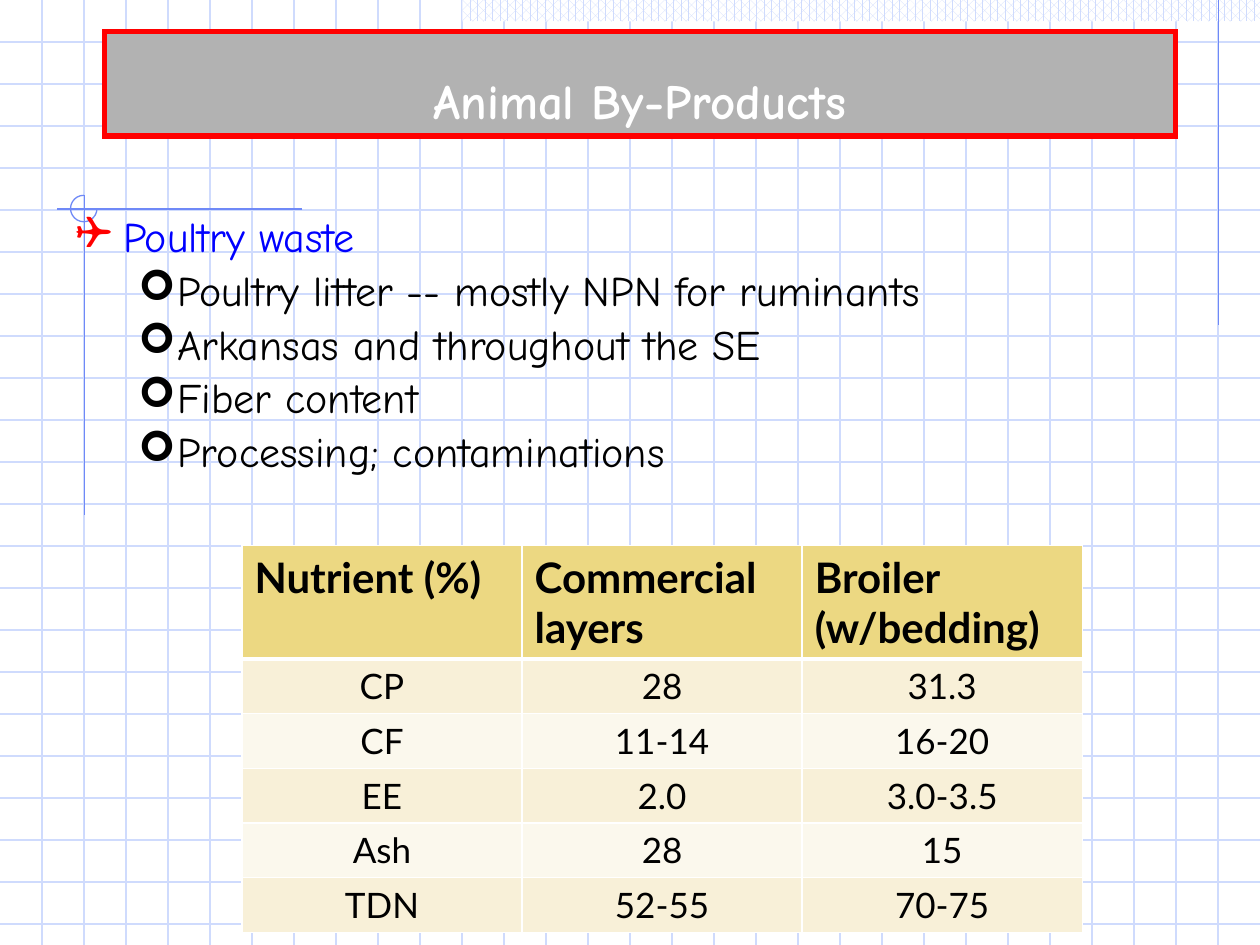
from dataclasses import dataclass

from lxml.etree import SubElement
from pptx import Presentation
from pptx.dml.color import RGBColor as Rgb
from pptx.enum.dml import MSO_PATTERN as Pattern
from pptx.enum.shapes import MSO_CONNECTOR as Connector, MSO_SHAPE as Shape
from pptx.enum.text import MSO_ANCHOR as Anchor, MSO_AUTO_SIZE as AutoSize, PP_ALIGN as Align
from pptx.oxml.ns import qn
from pptx.util import Inches, Pt


@dataclass(frozen=True)
class Theme:
    heading_font: str = "Comic Neue"
    table_font: str = "Lato"
    bullet_font: str = "Wingdings"
    title_size: int = 28
    body_size: int = 24
    header_size: int = 24
    cell_size: int = 20
    white: str = "FFFFFF"
    black: str = "000000"
    red: str = "FF0000"
    blue: str = "0000FF"
    gray: str = "B2B2B2"
    rule: str = "6F89F7"
    pale: str = "CFDBFD"
    header_fill: str = "ECD882"
    band_fills: tuple = ("F8F0D8", "FBF8ED")


WIDTH, HEIGHT = 10, 7.5
BULLETS = [
    (0, "Poultry waste"),
    (1, "Poultry litter -- mostly NPN for ruminants"),
    (1, "Arkansas and throughout the SE"),
    (1, "Fiber content"),
    (1, "Processing; contaminations"),
]
NUTRIENTS = [
    ("Nutrient (%)", "Commercial layers", "Broiler (w/bedding)"),
    ("CP", "28", "31.3"),
    ("CF", "11-14", "16-20"),
    ("EE", "2.0", "3.0-3.5"),
    ("Ash", "28", "15"),
    ("TDN", "52-55", "70-75"),
]


def inches(*values):
    return [Inches(value) for value in values]


class SlideBuilder:
    def __init__(self, slide, theme):
        self.slide = slide
        self.theme = theme

    def style(self, para, font, size, color, bold=False):
        for span in para.runs:
            span.font.name = font
            span.font.size = Pt(size)
            span.font.bold = bold
            span.font.color.rgb = Rgb.from_string(color)

    def outline(self, shape, color, width):
        shape.line.color.rgb = Rgb.from_string(color)
        shape.line.width = Pt(width)

    def title(self, text, left, top, width, height):
        box = self.slide.shapes.title
        box.left, box.top, box.width, box.height = inches(left, top, width, height)
        box.fill.solid()
        box.fill.fore_color.rgb = Rgb.from_string(self.theme.gray)
        self.outline(box, self.theme.red, 3)
        SubElement(box.line._get_or_add_ln(), qn("a:miter"), lim="800000")
        frame = box.text_frame
        frame.text = text
        frame.auto_size = AutoSize.NONE
        frame.vertical_anchor = Anchor.BOTTOM
        para = frame.paragraphs[0]
        para.alignment = Align.CENTER
        self.style(para, self.theme.heading_font, self.theme.title_size, self.theme.white, True)

    def pattern_band(self, left, top, width, height):
        band = self.slide.shapes.add_shape(Shape.RECTANGLE, *inches(left, top, width, height))
        band.shadow.inherit = False
        band.fill.patterned()
        band.fill.pattern = Pattern.PERCENT_60
        band.fill.fore_color.rgb = Rgb.from_string(self.theme.pale)
        band.fill.back_color.rgb = Rgb.from_string(self.theme.white)
        band.line.fill.background()

    def rule(self, x1, y1, x2, y2, color):
        line = self.slide.shapes.add_connector(Connector.STRAIGHT, *inches(x1, y1, x2, y2))
        self.outline(line, color, 0.75)
        SubElement(line._element.spPr, qn("a:effectLst"))

    def grid(self, rows, columns):
        """Rule the slide into squares of a third of an inch."""
        for row in range(1, rows + 1):
            self.rule(0, row / 3, WIDTH, row / 3, self.theme.pale)
        for column in range(1, columns + 1):
            self.rule(column / 3, 0, column / 3, HEIGHT, self.theme.pale)

    def three_quarter_arc(self, left, top, diameter):
        """Draw an open arc running clockwise from the right to the top."""
        arc = self.slide.shapes.add_shape(Shape.ARC, *inches(left, top, diameter, diameter))
        arc.shadow.inherit = False
        arc.adjustments[0] = 0
        arc.adjustments[1] = 162  # 270 degrees, in units of 100000/60000 degree
        arc.fill.background()
        self.outline(arc, self.theme.rule, 0.75)

    def bullet(self, para, mark, color, percent, margin, indent):
        props = para._p.get_or_add_pPr()
        props.set("marL", str(Inches(margin)))
        props.set("indent", str(Inches(-indent)))
        bullet_color = SubElement(props, qn("a:buClr"))
        SubElement(bullet_color, qn("a:srgbClr"), val=color)
        SubElement(props, qn("a:buSzPct"), val=str(percent * 1000))
        SubElement(props, qn("a:buFont"), typeface=self.theme.bullet_font)
        SubElement(props, qn("a:buChar"), char=mark)

    def bullet_list(self, items, left, top, width, height):
        theme = self.theme
        levels = [
            (theme.blue, ("❑", theme.red, 110, 0.38, 0.38)),
            (theme.black, ("➢", theme.black, 100, 0.81, 0.31)),
        ]
        box = self.slide.shapes.add_textbox(*inches(left, top, width, height))
        frame = box.text_frame
        frame.word_wrap = True
        frame.text = "\n".join(text for _, text in items)
        for index, (para, (level, _)) in enumerate(zip(frame.paragraphs, items)):
            color, bullet = levels[level]
            para.level = level
            self.bullet(para, *bullet)
            para.line_spacing = 0.9
            para.space_before = Pt(4.7 if index else 0)
            self.style(para, theme.heading_font, theme.body_size, color)

    def cell_borders(self, cell, bottom_width):
        props = cell._tc.get_or_add_tcPr()
        for side, width in (("L", 1), ("R", 1), ("T", 1), ("B", bottom_width)):
            border = SubElement(props, qn(f"a:ln{side}"), w=str(Pt(width)))
            fill = SubElement(border, qn("a:solidFill"))
            SubElement(fill, qn("a:srgbClr"), val=self.theme.white)

    def table(self, rows, left, top, width, header_height, row_height):
        theme = self.theme
        height = header_height + row_height * (len(rows) - 1)
        frame = self.slide.shapes.add_table(
            len(rows), len(rows[0]), *inches(left, top, width, height))
        table = frame.table
        for row_index, values in enumerate(rows):
            header = row_index == 0
            table.rows[row_index].height = Inches(header_height if header else row_height)
            fill = theme.header_fill if header else theme.band_fills[(row_index - 1) % 2]
            size = theme.header_size if header else theme.cell_size
            for column_index, value in enumerate(values):
                cell = table.cell(row_index, column_index)
                cell.text = value
                self.cell_borders(cell, 3 if header else 1)
                cell.fill.solid()
                cell.fill.fore_color.rgb = Rgb.from_string(fill)
                para = cell.text_frame.paragraphs[0]
                para.alignment = Align.LEFT if header else Align.CENTER
                self.style(para, theme.table_font, size, theme.black, header)


def main():
    deck = Presentation()
    deck.slide_width, deck.slide_height = inches(WIDTH, HEIGHT)
    title_only = deck.slide_layouts[5]
    theme = Theme()
    slide = deck.slides.add_slide(title_only)
    builder = SlideBuilder(slide, theme)

    builder.grid(22, 29)
    builder.pattern_band(3.67, 0, 6.33, 0.17)
    builder.rule(9.67, 0, 9.67, 2.58, theme.rule)
    builder.rule(2.4, 1.66, 0.45, 1.66, theme.rule)
    builder.rule(0.67, 1.55, 0.67, 4.09, theme.rule)
    builder.three_quarter_arc(0.56, 1.55, 0.21)

    builder.title("Animal By-Products", 0.83, 0.25, 8.5, 0.83)
    slide.shapes._spTree.append(slide.shapes.title._element)  # in front of the grid
    builder.bullet_list(BULLETS, 0.5, 1.67, 9, 1.75)
    builder.table(NUTRIENTS, 1.92, 4.33, 6.67, 0.62, 0.41)
    deck.save("out.pptx")


if __name__ == "__main__":
    main()
